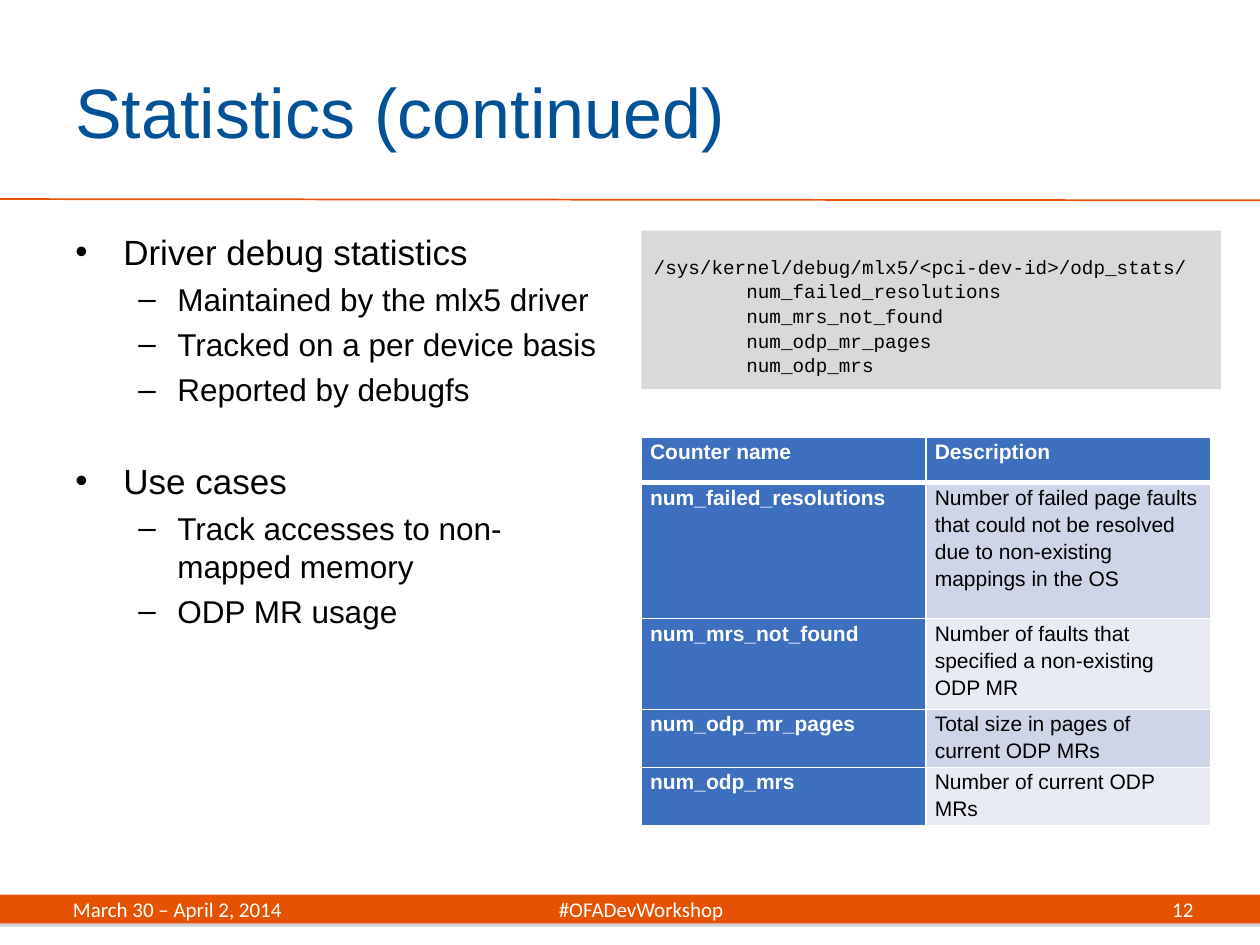
from lxml import etree
from pptx import Presentation
from pptx.dml.color import RGBColor
from pptx.enum.shapes import MSO_CONNECTOR, MSO_SHAPE
from pptx.enum.text import MSO_ANCHOR, PP_ALIGN
from pptx.oxml.ns import qn
from pptx.util import Inches, Pt

COLORS = {
    "orange": "E55302", "title": "005195", "black": "000000",
    "white": "FFFFFF", "code": "D9D9D9", "header": "3C6FBD",
    "band_dark": "CED5E8", "band_light": "E8EBF4", "shadow": "808080",
}


def color(name):
    return RGBColor.from_string(COLORS[name])


def add_node(parent, tag, **attributes):
    node = etree.SubElement(parent, qn(tag))
    for key, value in attributes.items():
        node.set(key, str(value))
    return node


def write(paragraph, text, size=12, font="Arial", ink="black", bold=False,
          align=PP_ALIGN.LEFT, before=0, spacing=None, bullet=None,
          indent=(0, 0), tab=None):
    """Fill a paragraph with one formatted run."""
    properties = paragraph._p.get_or_add_pPr()
    if bullet:
        margin, hanging = indent
        properties.set("marL", str(Inches(margin)))
        properties.set("indent", str(Inches(hanging)))
        add_node(properties, "a:buFont", typeface=font)
        add_node(properties, "a:buChar", char=bullet)
    if tab:
        tabs = add_node(properties, "a:tabLst")
        add_node(tabs, "a:tab", pos=Inches(tab), algn="ctr")
    paragraph.alignment = align
    paragraph.space_before = Pt(before)
    if spacing:
        paragraph.line_spacing = spacing
    run = paragraph.add_run()
    run.text = text
    run.font.size = Pt(size)
    run.font.name = font
    run.font.bold = bold
    run.font.color.rgb = color(ink)


class SlideBuilder:
    def __init__(self, slide):
        self.slide = slide

    def set_frame(self, frame, insets, anchor):
        frame.word_wrap = True
        frame.vertical_anchor = anchor
        (frame.margin_left, frame.margin_top,
         frame.margin_right, frame.margin_bottom) = map(Inches, insets)

    def fill_frame(self, frame, lines, **common):
        """Write (text, format) lines into a frame."""
        for index, (text, style) in enumerate(lines):
            paragraph = frame.add_paragraph() if index else frame.paragraphs[0]
            write(paragraph, text, **{**common, **style})

    def text(self, box, lines, insets=(0.1, 0.05, 0.1, 0.05),
             anchor=MSO_ANCHOR.TOP, **common):
        frame = self.slide.shapes.add_textbox(*map(Inches, box)).text_frame
        self.set_frame(frame, insets, anchor)
        self.fill_frame(frame, lines, **common)

    def rectangle(self, box, fill):
        shape = self.slide.shapes.add_shape(MSO_SHAPE.RECTANGLE, *map(Inches, box))
        shape.shadow.inherit = False
        shape.fill.solid()
        shape.fill.fore_color.rgb = color(fill)
        shape.line.fill.background()
        return shape

    def drop_shadow(self, shape, distance, opacity):
        effects = shape._element.spPr.find(qn("a:effectLst"))
        shadow = add_node(effects, "a:outerShdw", blurRad=0, dist=Pt(distance),
                          dir=90 * 60000, rotWithShape=0)
        tone = add_node(shadow, "a:srgbClr", val=COLORS["shadow"])
        add_node(tone, "a:alpha", val=opacity * 1000)

    def rule(self, start, end, ink, width):
        line = self.slide.shapes.add_connector(
            MSO_CONNECTOR.STRAIGHT, *map(Inches, start + end))
        line.line.color.rgb = color(ink)
        line.line.width = Pt(width)
        add_node(line._element.spPr, "a:effectLst")

    def borders(self, cell, widths):
        properties = cell._tc.get_or_add_tcPr()
        for position, (side, width) in enumerate(widths.items()):
            line = add_node(properties, f"a:ln{side}", w=Pt(width))
            fill = add_node(line, "a:solidFill")
            add_node(fill, "a:srgbClr", val=COLORS["white"])
            properties.insert(position, line)

    def table(self, box, rows, heights):
        table = self.slide.shapes.add_table(
            len(rows), len(rows[0]), *map(Inches, box)).table
        table.horz_banding = False
        for column in table.columns:
            column.width = Inches(box[2] / len(rows[0]))
        for r, (values, height) in enumerate(zip(rows, heights)):
            table.rows[r].height = Inches(height)
            for c, value in enumerate(values):
                cell = table.cell(r, c)
                heading = r == 0 or c == 0
                band = "band_dark" if r % 2 else "band_light"
                cell.fill.solid()
                cell.fill.fore_color.rgb = color("header" if heading else band)
                cell.margin_left = cell.margin_right = Inches(0.07)
                cell.margin_top = cell.margin_bottom = 0
                self.borders(cell, {"L": 1, "R": 1, "T": 3 if r == 1 else 1,
                                    "B": 3 if r == 0 else 1})
                write(cell.text_frame.paragraphs[0], value, bold=heading,
                      ink="white" if heading else "black", spacing=1.15)


def main():
    deck = Presentation()
    deck.slide_width, deck.slide_height = Inches(10), Inches(7.5)
    page = SlideBuilder(deck.slides.add_slide(deck.slide_layouts[6]))

    # Footer band and title rule
    footer_band = page.rectangle((0, 7.1, 10, 0.23), "orange")
    page.drop_shadow(footer_band, distance=1.8, opacity=35)
    page.rule((0, 1.58), (10, 1.59), "orange", 1)

    # Title
    page.text((0.5, 0.25, 8.17, 1.25), [("Statistics (continued)", {})],
              anchor=MSO_ANCHOR.MIDDLE, size=40, ink="title")

    # Bullet list
    topic = dict(size=20, bullet="•", indent=(0.38, -0.38))
    detail = dict(size=18, bullet="–", indent=(0.81, -0.31), before=4.2)
    page.text((0.5, 1.75, 4.42, 4.95), [
        ("Driver debug statistics", topic),
        ("Maintained by the mlx5 driver", detail),
        ("Tracked on a per device basis", detail),
        ("Reported by debugfs", detail),
        ("Use cases", {**topic, "before": 29.5}),
        ("Track accesses to non-mapped memory", detail),
        ("ODP MR usage", detail),
    ], insets=(0.1, 0.08, 0.1, 0.05))

    # Footer text
    footer = dict(anchor=MSO_ANCHOR.MIDDLE, font="Calibri", ink="white")
    page.text((0.48, 7.1, 9.05, 0.23),
              [("March 30 – April 2, 2014\t#OFADevWorkshop", {"tab": 4.51})],
              **footer)
    page.text((8.38, 7.1, 1.19, 0.23), [("12", {"align": PP_ALIGN.RIGHT})],
              **footer)

    # Code listing
    counters = {
        "num_failed_resolutions": "Number of failed page faults that could not "
                                  "be resolved due to non-existing mappings in the OS",
        "num_mrs_not_found": "Number of faults that specified a non-existing ODP MR",
        "num_odp_mr_pages": "Total size in pages of current ODP MRs",
        "num_odp_mrs": "Number of current ODP MRs",
    }
    listing = page.rectangle((5.09, 1.83, 4.6, 1.26), "code").text_frame
    page.set_frame(listing, (0.1, 0.18, 0, 0), MSO_ANCHOR.TOP)
    code_lines = ["/sys/kernel/debug/mlx5/<pci-dev-id>/odp_stats/"]
    code_lines += [" " * 8 + name for name in counters]
    page.fill_frame(listing, [(line, {}) for line in code_lines],
                    size=11, font="Courier New", spacing=1.07)

    # Counter table
    page.table((5.09, 3.47, 4.52, 2.88),
               [("Counter name", "Description"), *counters.items()],
               heights=(0.36, 1.08, 0.72, 0.36, 0.36))

    deck.save("out.pptx")


if __name__ == "__main__":
    main()
